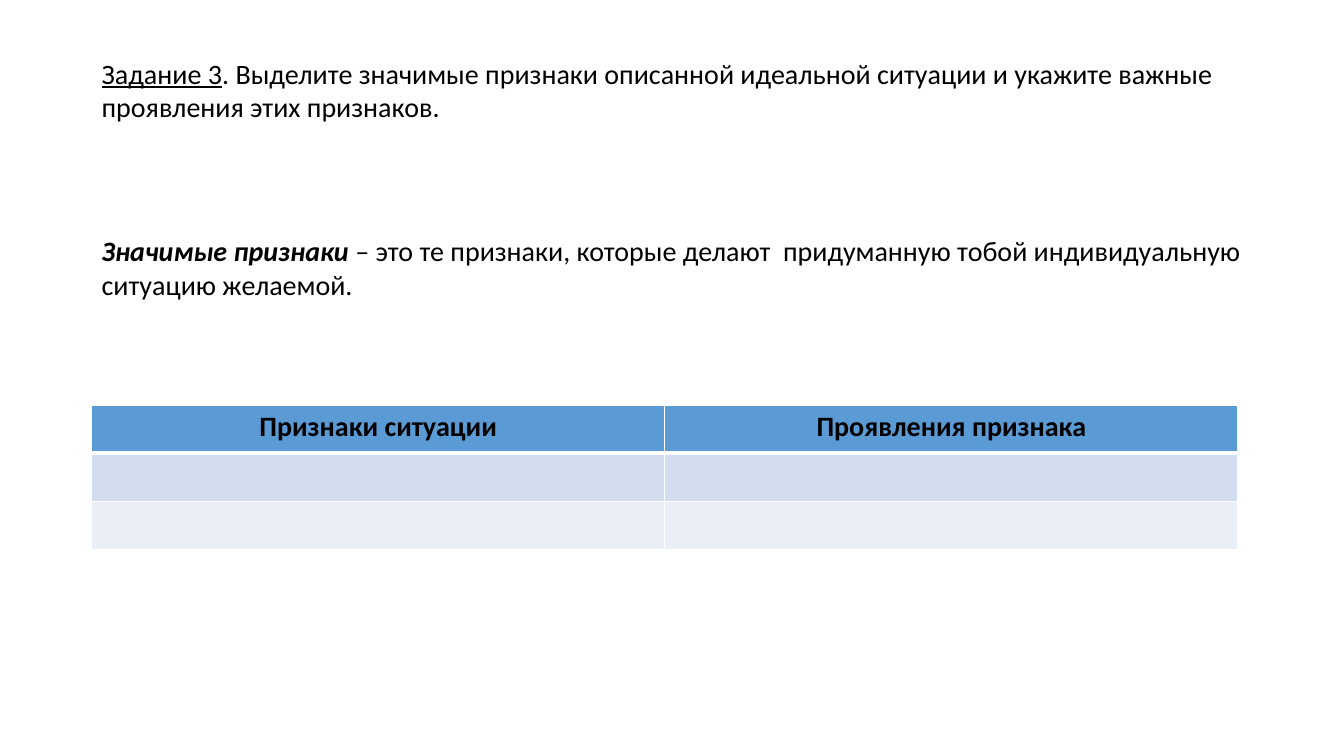
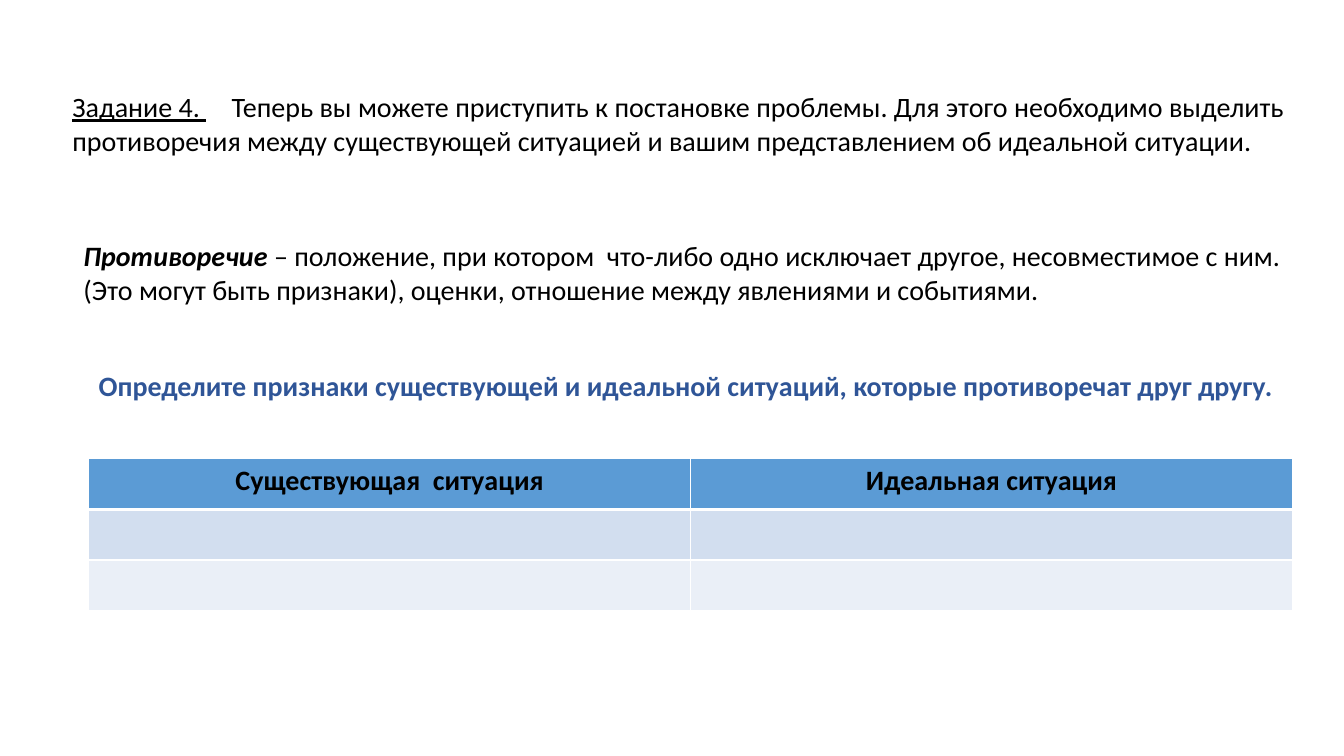
from lxml import etree
from pptx import Presentation
from pptx.dml.color import RGBColor
from pptx.enum.text import MSO_AUTO_SIZE, PP_ALIGN
from pptx.oxml.ns import qn
from pptx.util import Inches, Pt

CENTER = PP_ALIGN.CENTER
GROW = MSO_AUTO_SIZE.SHAPE_TO_FIT_TEXT

BLACK = RGBColor(0x00, 0x00, 0x00)
DARK_BLUE = RGBColor(0x2F, 0x55, 0x97)
HEADER_BLUE = RGBColor(0x5B, 0x9B, 0xD5)
ROW_FILLS = [HEADER_BLUE, RGBColor(0xD2, 0xDE, 0xEF), RGBColor(0xEA, 0xEF, 0xF7)]

PLAIN = {"name": "Calibri", "size": Pt(20)}
TASK = {**PLAIN, "underline": True}
TERM = {**PLAIN, "bold": True, "italic": True}
STRONG = {**PLAIN, "bold": True}

TASK_TAB = Inches(1.58)

# Each text: left, top, width, height, colour, paragraphs made of (text, format) runs.
SLIDES = [
    {
        "texts": [
            (0.91, 0.51, 11.37, 0.77, BLACK, [
                [("Задание 3", TASK),
                 (". Выделите значимые признаки описанной идеальной ситуации и укажите важные", PLAIN)],
                [("проявления этих признаков.", PLAIN)],
            ]),
            (0.91, 2.27, 11.63, 0.77, BLACK, [
                [("Значимые признаки ", TERM),
                 ("– это те признаки, которые делают  придуманную тобой индивидуальную", PLAIN)],
                [("ситуацию желаемой.", PLAIN)],
            ]),
        ],
        "table": (0.91, 4.02, 11.37, 1.43),
        "headers": ["Признаки ситуации", "Проявления признака"],
    },
    {
        "texts": [
            (0.62, 0.84, 12.37, 0.77, BLACK, [
                [("Задание 4. ", TASK),
                 ("\tТеперь вы можете приступить к постановке проблемы. Для этого необходимо выделить", PLAIN)],
                [("противоречия между существующей ситуацией и вашим представлением об идеальной ситуации.", PLAIN)],
            ]),
            (0.73, 2.32, 12.14, 0.77, BLACK, [
                [("Противоречие", TERM),
                 (" – положение, при котором  что-либо одно исключает другое, несовместимое с ним.", PLAIN)],
                [("(Это могут быть признаки), оценки, отношение между явлениями и событиями.", PLAIN)],
            ]),
            (0.88, 3.61, 11.94, 0.44, DARK_BLUE, [
                [("Определите признаки существующей и идеальной ситуаций, которые противоречат друг другу.", STRONG)],
            ]),
        ],
        "table": (0.88, 4.55, 11.94, 1.51),
        "headers": ["Существующая  ситуация", "Идеальная ситуация"],
    },
]


def add_run(paragraph, text, text_format, color):
    run = paragraph.add_run()
    run.text = text
    for attribute, value in text_format.items():
        setattr(run.font, attribute, value)
    run.font.color.rgb = color


def add_borders(cell, widths):
    """Draw white cell borders; widths maps a side (L, R, T, B) to points."""
    properties = cell._tc.get_or_add_tcPr()
    for side, width in widths.items():
        line = etree.SubElement(properties, qn(f"a:ln{side}"), w=str(Pt(width)))
        fill = etree.SubElement(line, qn("a:solidFill"))
        etree.SubElement(fill, qn("a:srgbClr"), val="FFFFFF")


presentation = Presentation()
presentation.slide_width = Inches(13.33)
presentation.slide_height = Inches(7.5)
blank_layout = presentation.slide_layouts[6]

for content in SLIDES:
    slide = presentation.slides.add_slide(blank_layout)

    for *box, color, paragraphs in content["texts"]:
        text_frame = slide.shapes.add_textbox(*map(Inches, box)).text_frame
        text_frame.word_wrap = False
        text_frame.auto_size = GROW
        for index, runs in enumerate(paragraphs):
            paragraph = text_frame.add_paragraph() if index else text_frame.paragraphs[0]
            for text, text_format in runs:
                add_run(paragraph, text, text_format, color)
                if text.startswith("\t"):
                    tabs = etree.SubElement(paragraph._p.get_or_add_pPr(), qn("a:tabLst"))
                    etree.SubElement(tabs, qn("a:tab"), pos=str(TASK_TAB), algn="l")

    headers = content["headers"]
    table = slide.shapes.add_table(
        len(ROW_FILLS), len(headers), *map(Inches, content["table"])
    ).table
    for row, fill_color in enumerate(ROW_FILLS):
        borders = {"L": 1, "R": 1, "T": 3 if row == 1 else 1, "B": 3 if row == 0 else 1}
        for column, header in enumerate(headers):
            cell = table.cell(row, column)
            add_borders(cell, borders)
            cell.fill.solid()
            cell.fill.fore_color.rgb = fill_color
            if row == 0:
                paragraph = cell.text_frame.paragraphs[0]
                paragraph.alignment = CENTER
                add_run(paragraph, header, STRONG, BLACK)

presentation.save("out.pptx")
